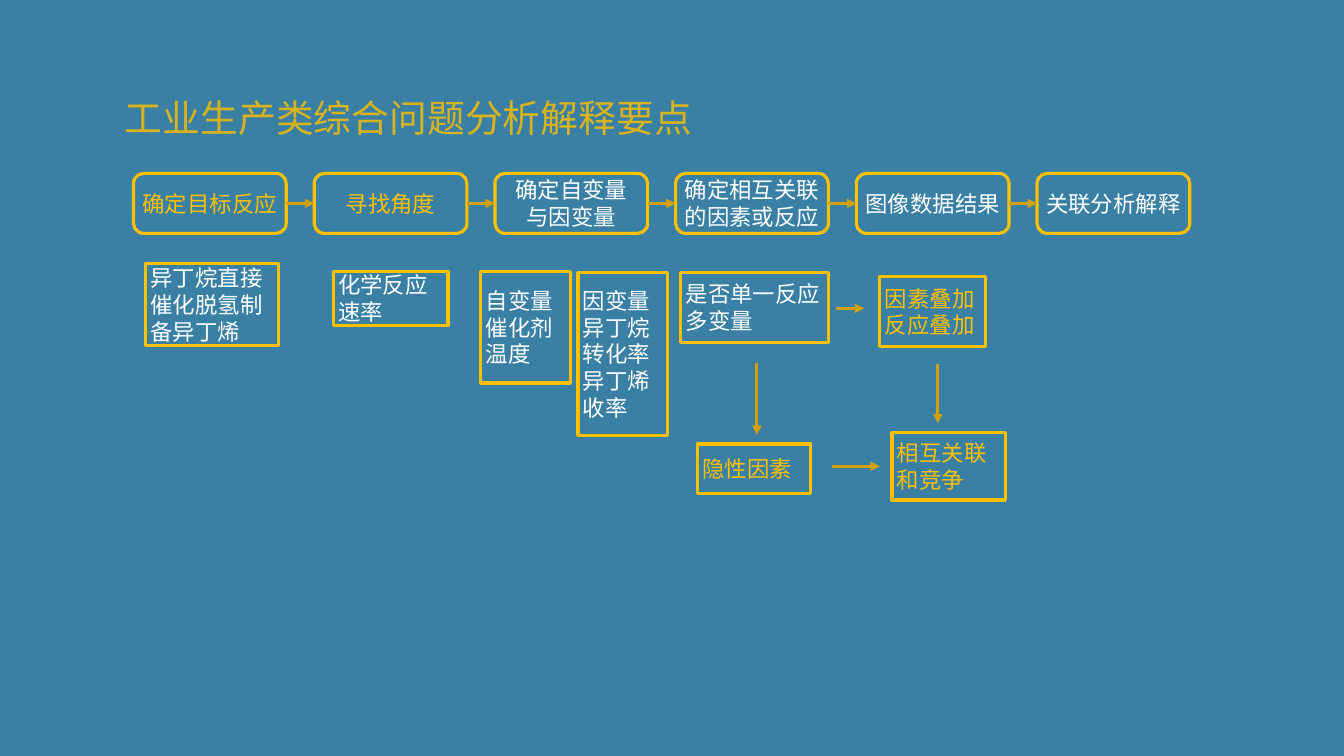
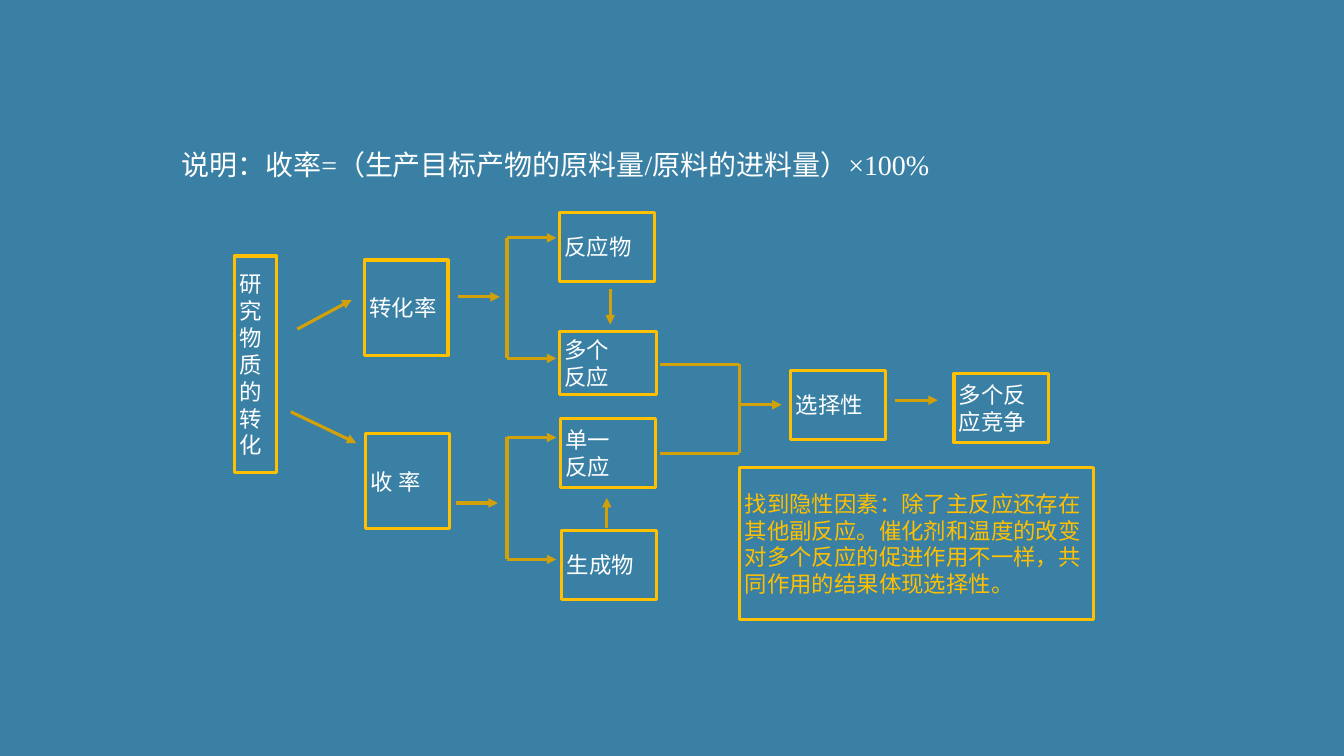
from dataclasses import dataclass

from lxml import etree
from pptx import Presentation
from pptx.dml.color import RGBColor
from pptx.enum import shapes, text
from pptx.oxml.ns import qn
from pptx.util import Inches, Pt


@dataclass(frozen=True)
class Theme:
    ground: RGBColor = RGBColor(0x3A, 0x80, 0xA4)
    gold: RGBColor = RGBColor(0xFF, 0xC0, 0x00)
    arrow: RGBColor = RGBColor(0xD2, 0xA1, 0x0A)
    white: RGBColor = RGBColor(0xFF, 0xFF, 0xFF)
    sans: str = "Noto Sans CJK SC"
    serif: str = "Times New Roman"
    heading: int = 54
    formula: int = 40
    label: int = 32
    stroke: float = 4.5


class Board:
    def __init__(self, theme):
        self.theme = theme
        self.page = None
        self.deck = Presentation()
        self.deck.slide_width, self.deck.slide_height = Inches(26.67), Inches(15)
        fill = self.deck.slide_master.background.fill
        fill.solid()
        fill.fore_color.rgb = theme.ground

    def add_page(self):
        self.page = self.deck.slides.add_slide(self.deck.slide_layouts[5])

    def set_words(self, frame, words, size, color, font, align):
        frame.word_wrap = True
        frame.auto_size = text.MSO_AUTO_SIZE.NONE
        frame.vertical_anchor = text.MSO_ANCHOR.MIDDLE
        frame.text = words
        for para in frame.paragraphs:
            para.alignment = align
            para.font.size = Pt(size)
            para.font.color.rgb = color
            para.font.name = font
            defaults = para._p.find(qn("a:pPr")).find(qn("a:defRPr"))
            etree.SubElement(defaults, qn("a:ea")).set("typeface", self.theme.sans)

    def title(self, words, at, size, color, font, indent=0.1, opacity=100):
        box = self.page.shapes.title
        box.left, box.top, box.width, box.height = map(Inches, at)
        frame = box.text_frame
        self.set_words(frame, words, size, color, font, text.PP_ALIGN.LEFT)
        frame.margin_left = Inches(indent)
        if opacity < 100:
            for tint in box._element.iter(qn("a:srgbClr")):
                etree.SubElement(tint, qn("a:alpha")).set("val", str(opacity * 1000))

    def box(self, words, left, top, width, height, color=None, font=None, rounded=False):
        kind = shapes.MSO_SHAPE.ROUNDED_RECTANGLE if rounded else shapes.MSO_SHAPE.RECTANGLE
        align = text.PP_ALIGN.CENTER if rounded else text.PP_ALIGN.LEFT
        box = self.page.shapes.add_shape(kind, *map(Inches, (left, top, width, height)))
        box.shadow.inherit = False
        box.fill.background()
        box.line.color.rgb = self.theme.gold
        box.line.width = Pt(self.theme.stroke)
        self.set_words(box.text_frame, words, self.theme.label, color or self.theme.white,
                       font or self.theme.sans, align)
        return box

    def line(self, x1, y1, x2, y2, head=False):
        line = self.page.shapes.add_connector(
            shapes.MSO_CONNECTOR.STRAIGHT, *map(Inches, (x1, y1, x2, y2)))
        line.line.color.rgb = self.theme.arrow
        line.line.width = Pt(self.theme.stroke)
        properties = line._element.spPr
        if head:
            outline = properties.find(qn("a:ln"))
            etree.SubElement(outline, qn("a:tailEnd")).set("type", "triangle")
        etree.SubElement(properties, qn("a:effectLst"))
        return line

    def arrow(self, x1, y1, x2, y2):
        return self.line(x1, y1, x2, y2, head=True)

    def link(self, first, second):
        arrow = self.arrow(0, 0, 1, 1)
        arrow.begin_connect(first, 3)
        arrow.end_connect(second, 1)

    def fork(self, left, right, top, bottom):
        self.line(left, bottom, left, top)
        for level in (top, bottom):
            self.arrow(left, level, right, level)

    def merge(self, left, right, top, bottom):
        self.line(right, bottom, right, top)
        for level in (top, bottom):
            self.line(right, level, left, level)


def build_key_points(board):
    theme = board.theme
    gold = theme.gold
    board.add_page()
    board.title("工业生产类综合问题分析解释要点", (0, 1.82, 15.37, 1.02),
                theme.heading, gold, theme.sans, indent=2.48, opacity=80)

    steps = ["确定目标反应", "寻找角度", "确定自变量\n与因变量",
             "确定相互关联的因素或反应", "图像数据结果", "关联分析解释"]
    first_left, last_left = 2.65, 20.58
    pitch = (last_left - first_left) / (len(steps) - 1)
    boxes = [board.box(words, first_left + i * pitch, 3.44, 3.03, 1.19,
                       color=gold if i < 2 else theme.white, rounded=True)
             for i, words in enumerate(steps)]
    for first, second in zip(boxes, boxes[1:]):
        board.link(first, second)

    board.box("异丁烷直接催化脱氢制备异丁烯", 2.89, 5.23, 2.63, 1.63, font=theme.serif)
    board.box("化学反应速率", 6.61, 5.38, 2.28, 1.08)
    board.box("自变量催化剂\n温度", 9.54, 5.38, 1.78, 2.22)
    board.box("因变量异丁烷转化率\n异丁烯收率", 11.47, 5.41, 1.78, 3.23, font=theme.serif)
    board.box("是否单一反应\n多变量", 13.51, 5.41, 2.93, 1.38)
    board.box("因素叠加\n反应叠加", 17.46, 5.49, 2.1, 1.38, gold)
    board.box("隐性因素", 13.84, 8.81, 2.25, 0.98, gold)
    board.box("相互关联和竞争", 17.7, 8.58, 2.25, 1.34, gold)

    for ends in [(16.59, 6.12, 17.15, 6.12), (15.02, 7.21, 15.02, 8.63),
                 (18.61, 7.22, 18.61, 8.4), (16.51, 9.25, 17.46, 9.25)]:
        board.arrow(*ends)


def build_conversion(board):
    theme = board.theme
    board.add_page()
    board.title("说明：收率=（生产目标产物的原料量/原料的进料量）×100%",
                (3.5, 2.87, 23.17, 0.77), theme.formula, theme.white, theme.serif)

    board.box("研究物质的转化", 4.65, 5.08, 0.84, 4.3)
    for words, left, top in [("转化率", 7.23, 5.16), ("收 率", 7.26, 8.6)]:
        board.box(words, left, top, 1.66, 1.89)
    board.box("多个\n反应", 11.1, 6.57, 1.93, 1.26)
    for words, left, top in [("反应物", 11.1, 4.21), ("单一\n反应", 11.12, 8.3),
                             ("生成物", 11.15, 10.52), ("选择性", 15.69, 7.35),
                             ("多个反应竞争", 18.93, 7.41)]:
        board.box(words, left, top, 1.88, 1.37)
    board.box("找到隐性因素：除了主反应还存在其他副反应。催化剂和温度的改变对多个反应的"
              "促进作用不一样，共同作用的结果体现选择性。",
              14.68, 9.27, 7.02, 3.03, theme.gold)

    board.fork(10.06, 11.04, 4.72, 7.11)
    board.fork(10.06, 11.04, 8.68, 11.1)
    board.merge(13.09, 14.67, 7.23, 8.99)
    for ends in [(5.9, 6.53, 6.98, 5.95), (5.77, 8.17, 7.07, 8.79),
                 (9.08, 5.89, 9.92, 5.89), (9.04, 9.98, 9.88, 9.98),
                 (12.11, 5.74, 12.11, 6.44), (12.04, 10.47, 12.04, 9.88),
                 (14.67, 8.03, 15.51, 8.03), (17.77, 7.94, 18.61, 7.94)]:
        board.arrow(*ends)


def main():
    board = Board(Theme())
    build_key_points(board)
    build_conversion(board)
    board.deck.save("out.pptx")


if __name__ == "__main__":
    main()
